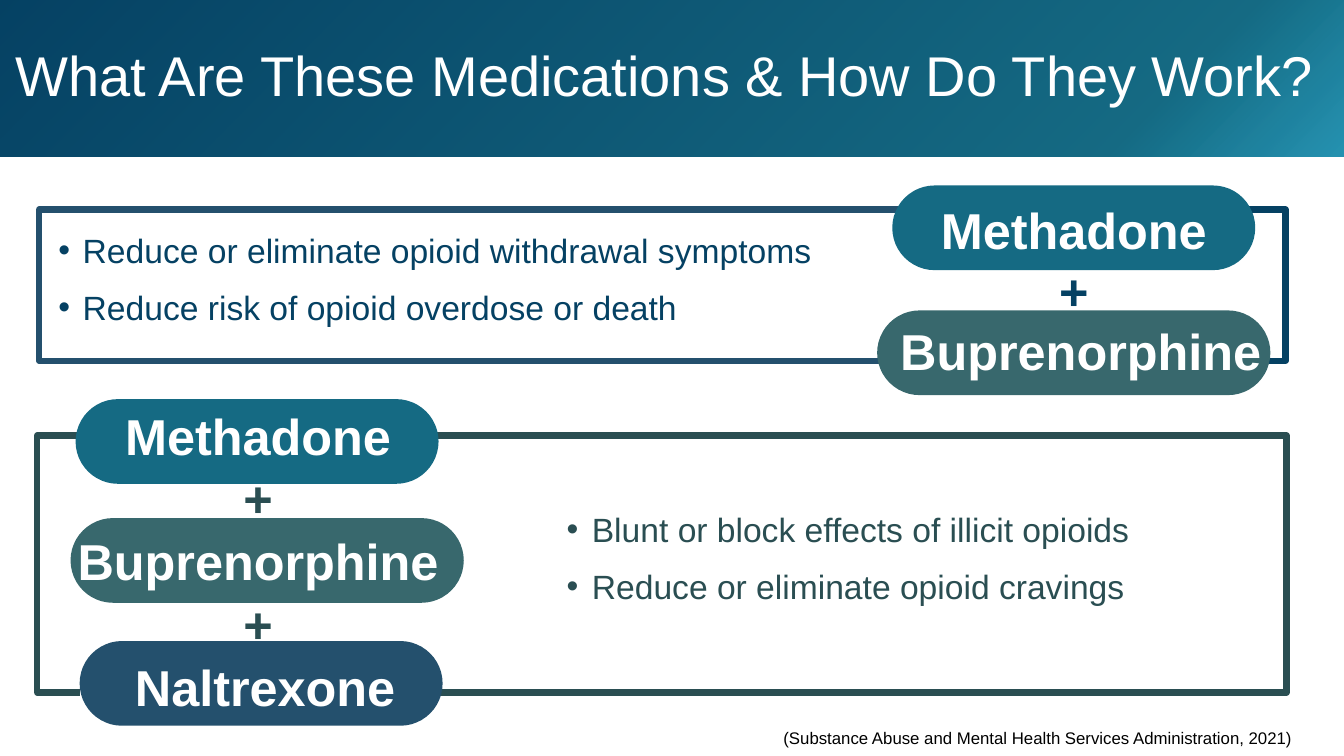
from lxml import etree
from pptx import Presentation
from pptx.dml.color import RGBColor
from pptx.enum.shapes import MSO_SHAPE as Shape
from pptx.enum.text import MSO_ANCHOR as Anchor, MSO_AUTO_SIZE as AutoSize, PP_ALIGN as Align
from pptx.oxml import parse_xml
from pptx.oxml.ns import nsdecls, qn
from pptx.util import Inches, Pt

WHITE = RGBColor(0xFF, 0xFF, 0xFF)
BLACK = RGBColor(0x00, 0x00, 0x00)
NAVY = RGBColor(0x05, 0x41, 0x63)
BLUE = RGBColor(0x24, 0x50, 0x6D)
TEAL = RGBColor(0x15, 0x6A, 0x83)
SAGE = RGBColor(0x38, 0x68, 0x6D)
PINE = RGBColor(0x2A, 0x4E, 0x52)

deck = Presentation()
deck.slide_width, deck.slide_height = Inches(13.33), Inches(7.5)
page = deck.slides.add_slide(deck.slide_layouts[4])
shapes = page.shapes


def place(box, position, anchor, margins=(0.1, 0.05, 0.1, 0.05)):
    """Position a text box and set up its frame."""
    box.left, box.top, box.width, box.height = map(Inches, position)
    frame = box.text_frame
    left, top, right, bottom = map(Inches, margins)
    settings = {"margin_left": left, "margin_top": top, "margin_right": right,
                "margin_bottom": bottom, "word_wrap": True,
                "auto_size": AutoSize.NONE, "vertical_anchor": anchor}
    for name, value in settings.items():
        setattr(frame, name, value)


def write(box, lines, size, bold=False, indent=0, **spacing):
    """Write (text, colour) lines; an indent gives them bullets."""
    frame = box.text_frame
    for index, (text, color) in enumerate(lines):
        para = frame.add_paragraph() if index else frame.paragraphs[0]
        if indent:
            props = para._p.get_or_add_pPr()
            props.set("marL", str(Inches(indent)))
            props.set("indent", str(-Inches(indent)))
            etree.SubElement(props, qn("a:buChar")).set("char", "•")
        layout = {"line_spacing": 1.0, "space_before": Pt(0), "space_after": Pt(0), **spacing}
        if index == 0:
            layout["space_before"] = Pt(0)
        for name, value in layout.items():
            setattr(para, name, value)
        span = para.add_run()
        span.text = text
        span.font.color.rgb = color
        for name, value in {"name": "Arial", "size": Pt(size), "bold": bold}.items():
            setattr(span.font, name, value)


# Frames and pills, from back to front
LEFT, RIGHT, PILL = Shape.LEFT_BRACKET, Shape.RIGHT_BRACKET, Shape.ROUNDED_RECTANGLE
for kind, color, position in [
    (RIGHT, NAVY, (12.39, 2.08, 0.36, 1.5)),
    (LEFT, PINE, (0.37, 4.32, 0.42, 2.55)),
    (RIGHT, PINE, (4.21, 4.32, 8.55, 2.55)),
    (PILL, SAGE, (0.7, 5.14, 3.9, 0.84)),
    (PILL, BLUE, (0.79, 6.36, 3.6, 0.84)),
    (LEFT, BLUE, (0.39, 2.08, 8.75, 1.5)),
    (PILL, TEAL, (8.85, 1.84, 3.6, 0.84)),
    (PILL, SAGE, (8.7, 3.08, 3.9, 0.84)),
    (PILL, TEAL, (0.75, 3.96, 3.6, 0.84)),
]:
    shape = shapes.add_shape(kind, *map(Inches, position))
    shape.shadow.inherit = False
    if kind == PILL:
        shape.adjustments[0] = 0.5
        shape.fill.solid()
        shape.fill.fore_color.rgb = color
        shape.line.fill.background()
    else:
        shape.adjustments[0] = 0
        shape.fill.background()
        shape.line.color.rgb = color
        shape.line.width = Pt(4.5)

# Placeholders go in front of the frames and pills
title, upper_names, upper_effects, lower_names, lower_effects = [
    box for box in shapes if box.is_placeholder]
for box in (title, upper_effects, upper_names, lower_names, lower_effects):
    shapes._spTree.append(box._element)

# Title band
place(title, (0, 0, 13.33, 1.55), Anchor.MIDDLE, (0, 0.1, 0, 0.1))
write(title, [("What Are These Medications & How Do They Work? ", WHITE)], 40,
      alignment=Align.CENTER, line_spacing=0.9)
title._element.spPr.append(parse_xml(
    f'<a:gradFill {nsdecls("a")} rotWithShape="1"><a:gsLst>'
    '<a:gs pos="0"><a:srgbClr val="1C8EAE"><a:alpha val="95000"/></a:srgbClr></a:gs>'
    f'<a:gs pos="16000"><a:srgbClr val="{TEAL}"/></a:gs>'
    f'<a:gs pos="100000"><a:srgbClr val="{NAVY}"/></a:gs>'
    '</a:gsLst><a:lin ang="13500000" scaled="0"/></a:gradFill>'))

# Upper group: effects and medications
place(upper_effects, (0.58, 2.53, 7.54, 0.92), Anchor.BOTTOM, (0, 0.05, 0, 0.2))
write(upper_effects, [("Reduce or eliminate opioid withdrawal symptoms", NAVY),
                      ("Reduce risk of opioid overdose or death", NAVY)],
      24, indent=0.24, space_before=Pt(6), space_after=Pt(6))
place(upper_names, (8.42, 1.92, 4.6, 1.92), Anchor.MIDDLE)
write(upper_names, [("Methadone ", WHITE), ("+ ", NAVY), ("Buprenorphine", WHITE)],
      36, bold=True, alignment=Align.CENTER)

# Lower group: medications and effects
place(lower_names, (0.33, 4.01, 4.6, 3.18), Anchor.MIDDLE)
write(lower_names, [("Methadone ", WHITE), ("+ ", PINE), ("Buprenorphine ", WHITE),
                    ("+ ", PINE), ("Naltrexone", WHITE)],
      36, bold=True, alignment=Align.CENTER, line_spacing=0.9, space_before=Pt(6))
place(lower_effects, (5.52, 5.07, 6.66, 0.92), Anchor.MIDDLE)
write(lower_effects, [("Blunt or block effects of illicit opioids", PINE),
                      ("Reduce or eliminate opioid cravings", PINE)],
      24, indent=0.25, space_after=Pt(12))

# Source citation
citation = shapes.add_textbox(0, 0, 0, 0)
place(citation, (7.46, 7.11, 5.36, 0.41), Anchor.MIDDLE, (0.1, 0.05, 0, 0.05))
write(citation, [("(Substance Abuse and Mental Health Services Administration, 2021)", BLACK)],
      12, alignment=Align.RIGHT)

deck.save("out.pptx")
